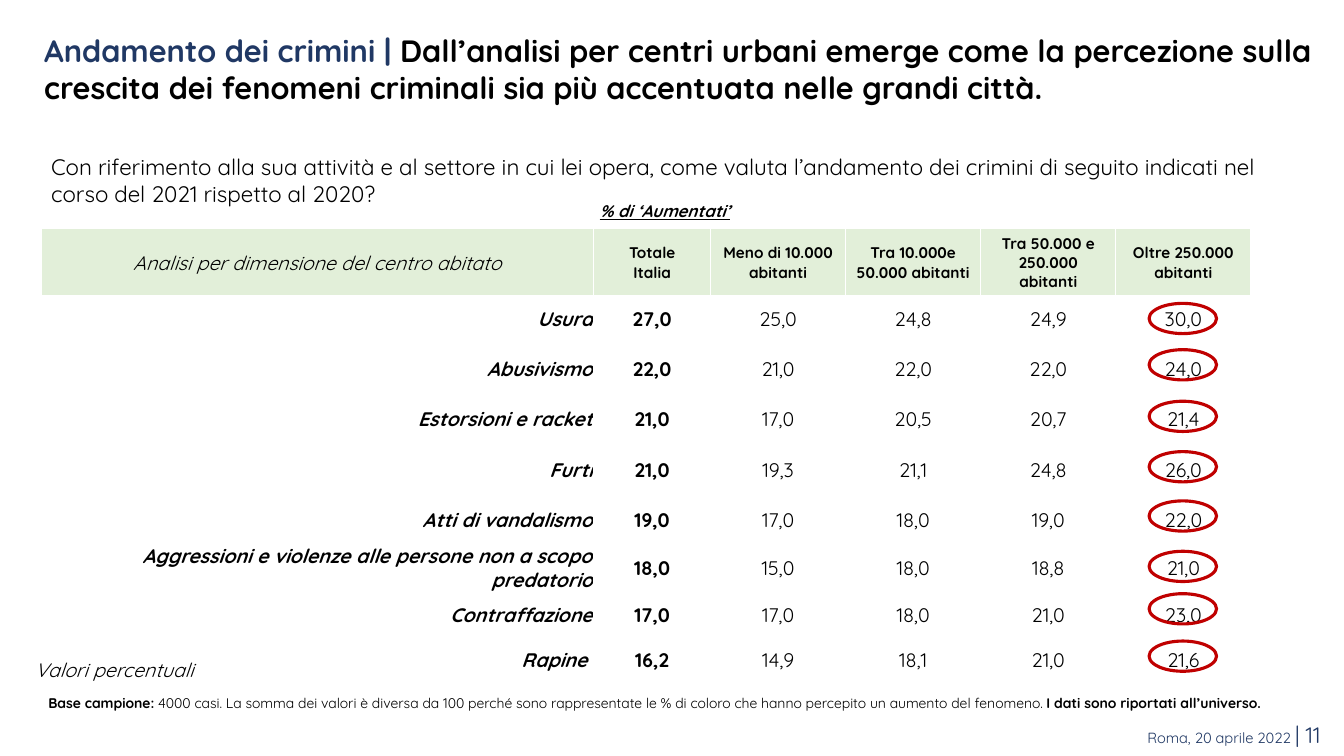
from typing import NamedTuple

from lxml import etree
from pptx import Presentation
from pptx.dml.color import RGBColor
from pptx.enum import shapes, text
from pptx.oxml import ns
from pptx.util import Pt

FONT = "Quicksand"
BLACK, NAVY, WHITE, GREEN, RED = "000000", "203864", "FFFFFF", "E2EFD9", "C00000"
LEFT, CENTER, RIGHT = text.PP_ALIGN.LEFT, text.PP_ALIGN.CENTER, text.PP_ALIGN.RIGHT


class Run(NamedTuple):
    text: str
    size: float
    color: str = BLACK
    bold: bool = False
    italic: bool = False
    underline: bool = False


class Box(NamedTuple):
    left: float
    top: float
    width: float
    height: float


class Note(NamedTuple):
    box: Box
    runs: list[Run]
    align: text.PP_ALIGN = LEFT


class Crime(NamedTuple):
    name: str
    height: float
    oval_top: float
    values: str


TITLE = [
    Run("Andamento dei crimini | ", 22, NAVY, bold=True),
    Run("Dall’analisi per centri urbani emerge come la percezione sulla crescita "
        "dei fenomeni criminali sia più accentuata nelle grandi città.", 22, bold=True),
]
NOTES = [
    Note(Box(451.4, 511.9, 499, 26.6),
         [Run("Roma, 20 aprile 2022 ", 10.5, NAVY), Run("| 11", 16, NAVY)], RIGHT),
    Note(Box(18, 466.6, 167.8, 24.5), [Run("Valori percentuali", 14, italic=True)]),
    Note(Box(27.4, 492.5, 898.6, 31.7), [
        Run("Base campione:", 10, bold=True),
        Run(" 4000 casi. La somma dei valori è diversa da 100 perché sono rappresentate "
            "le % di coloro che hanno percepito un aumento del fenomeno. ", 10),
        Run("I dati sono riportati all’universo.", 10, bold=True),
    ]),
    Note(Box(29.5, 105.8, 912.2, 46.1), [
        Run("Con riferimento alla sua attività e al settore in cui lei opera, come valuta "
            "l’andamento dei crimini di seguito indicati nel corso del 2021 rispetto al 2020?", 16),
    ]),
    Note(Box(421.2, 139.7, 167.8, 21.6),
         [Run("% di ‘Aumentati’", 12, bold=True, italic=True, underline=True)]),
]
COLUMN_WIDTHS = [394.6, 83.5] + 4 * [96.5]
HEADER_HEIGHT = 46.1
HEADERS = ["Analisi per dimensione del centro abitato", "Totale\nItalia",
           "Meno di 10.000 abitanti", "Tra 10.000e 50.000 abitanti",
           "Tra 50.000 e 250.000 abitanti", "Oltre 250.000 abitanti"]
CRIMES = [
    Crime("Usura", 31.7, 216.7, "27,0 25,0 24,8 24,9 30,0"),
    Crime("Abusivismo", 38.9, 249.8, "22,0 21,0 22,0 22,0 24,0"),
    Crime("Estorsioni e racket", 33.1, 286.6, "21,0 17,0 20,5 20,7 21,4"),
    Crime("Furti", 38.9, 322.6, "21,0 19,3 21,1 24,8 26,0"),
    Crime("Atti di vandalismo", 33.1, 357.8, "19,0 17,0 18,0 19,0 22,0"),
    Crime("Aggressioni e violenze alle persone non a scopo predatorio", 33.1, 393.8,
          "18,0 15,0 18,0 18,8 21,0"),
    Crime("Contraffazione", 31.7, 424.1, "17,0 17,0 18,0 21,0 23,0"),
    Crime("Rapine ", 31.7, 457.9, "16,2 14,9 18,1 21,0 21,6"),
]


def rgb(color: str) -> RGBColor:
    return RGBColor.from_string(color)


def add_run(p, content: str, *, size: float, color: str = BLACK, bold: bool = False,
            italic: bool = False, underline: bool = False) -> None:
    r = p.add_run()
    r.text = content
    font = r.font
    font.name, font.size, font.color.rgb = FONT, Pt(size), rgb(color)
    font.bold, font.italic, font.underline = bold, italic, underline


def write_runs(tf, runs: list[Run], align: text.PP_ALIGN) -> None:
    p = tf.paragraphs[0]
    p.alignment = align
    for run in runs:
        add_run(p, run.text, size=run.size, color=run.color, bold=run.bold,
                italic=run.italic, underline=run.underline)


def add_title(s) -> None:
    title = s.shapes.title
    title.left, title.top, title.width, title.height = map(Pt, (26.6, 19.4, 929.5, 59))
    tf = title.text_frame
    tf.word_wrap = True
    tf.auto_size = text.MSO_AUTO_SIZE.NONE
    tf.vertical_anchor = text.MSO_ANCHOR.TOP
    tf.margin_left = tf.margin_right = Pt(5)
    tf.margin_top = tf.margin_bottom = Pt(3)
    write_runs(tf, TITLE, LEFT)
    tf.paragraphs[0].line_spacing = 1.0


def add_note(s, note: Note) -> None:
    tf = s.shapes.add_textbox(*map(Pt, note.box)).text_frame
    tf.word_wrap = True
    write_runs(tf, note.runs, note.align)


def add_borders(cell, bottom: float) -> None:
    """Draw white cell borders, 1 point wide except at the bottom."""
    tc_pr = cell._tc.get_or_add_tcPr()
    for i, (side, width) in enumerate(zip("LRTB", (1, 1, 1, bottom))):
        line = etree.Element(ns.qn(f"a:ln{side}"), w=str(Pt(width)))
        fill = etree.SubElement(line, ns.qn("a:solidFill"))
        etree.SubElement(fill, ns.qn("a:srgbClr"), val=WHITE)
        tc_pr.insert(i, line)


def fill_cell(cell, content: str, *, align: text.PP_ALIGN = CENTER, header: bool = False,
              size: float = 14, bold: bool = False, italic: bool = False) -> None:
    cell.fill.solid()
    cell.fill.fore_color.rgb = rgb(GREEN if header else WHITE)
    add_borders(cell, 3 if header else 1)
    cell.vertical_anchor = text.MSO_ANCHOR.MIDDLE
    if not header:
        cell.margin_left = cell.margin_right = cell.margin_top = Pt(0.7)
        cell.margin_bottom = 0
    tf = cell.text_frame
    for i, line in enumerate(content.split("\n")):
        p = tf.add_paragraph() if i else tf.paragraphs[0]
        p.alignment = align
        add_run(p, line, size=size, bold=bold, italic=italic)


def add_crime_table(s) -> None:
    heights = [HEADER_HEIGHT] + [crime.height for crime in CRIMES]
    frame = s.shapes.add_table(len(heights), len(COLUMN_WIDTHS), Pt(29.5), Pt(163.4),
                               Pt(sum(COLUMN_WIDTHS)), Pt(sum(heights)))
    table = frame.table
    table.horz_banding = False
    for column, width in zip(table.columns, COLUMN_WIDTHS):
        column.width = Pt(width)
    for row, height in zip(table.rows, heights):
        row.height = Pt(height)
    for j, header in enumerate(HEADERS):
        fill_cell(table.cell(0, j), header, header=True, size=11 if j else 14,
                  bold=j > 0, italic=j == 0)
    for i, crime in enumerate(CRIMES, 1):
        fill_cell(table.cell(i, 0), crime.name, align=RIGHT, bold=True, italic=True)
        for j, value in enumerate(crime.values.split(), 1):
            fill_cell(table.cell(i, j), value, bold=j == 1)


def add_oval(s, top: float) -> None:
    oval = s.shapes.add_shape(shapes.MSO_SHAPE.OVAL, Pt(820.8), Pt(top), Pt(48.2), Pt(21.6))
    oval.shadow.inherit = False
    oval.fill.background()
    oval.line.color.rgb = rgb(RED)
    oval.line.width = Pt(2.25)


def main() -> None:
    prs = Presentation()
    prs.slide_width, prs.slide_height = Pt(960), Pt(540)
    s = prs.slides.add_slide(prs.slide_layouts.get_by_name("Title Only"))
    add_title(s)
    add_crime_table(s)
    for note in NOTES:
        add_note(s, note)
    for crime in CRIMES:
        add_oval(s, crime.oval_top)
    prs.save("out.pptx")


if __name__ == "__main__":
    main()
